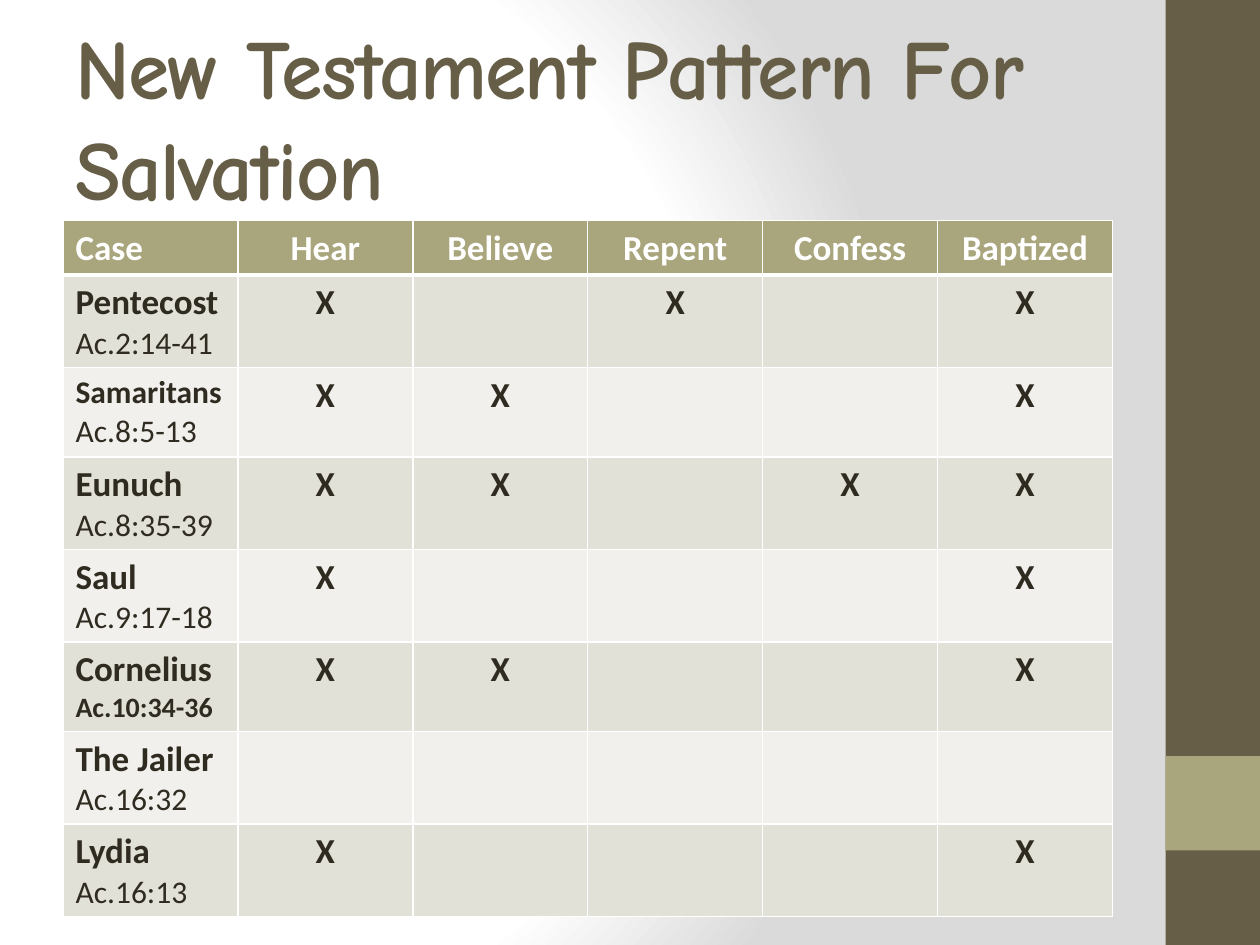
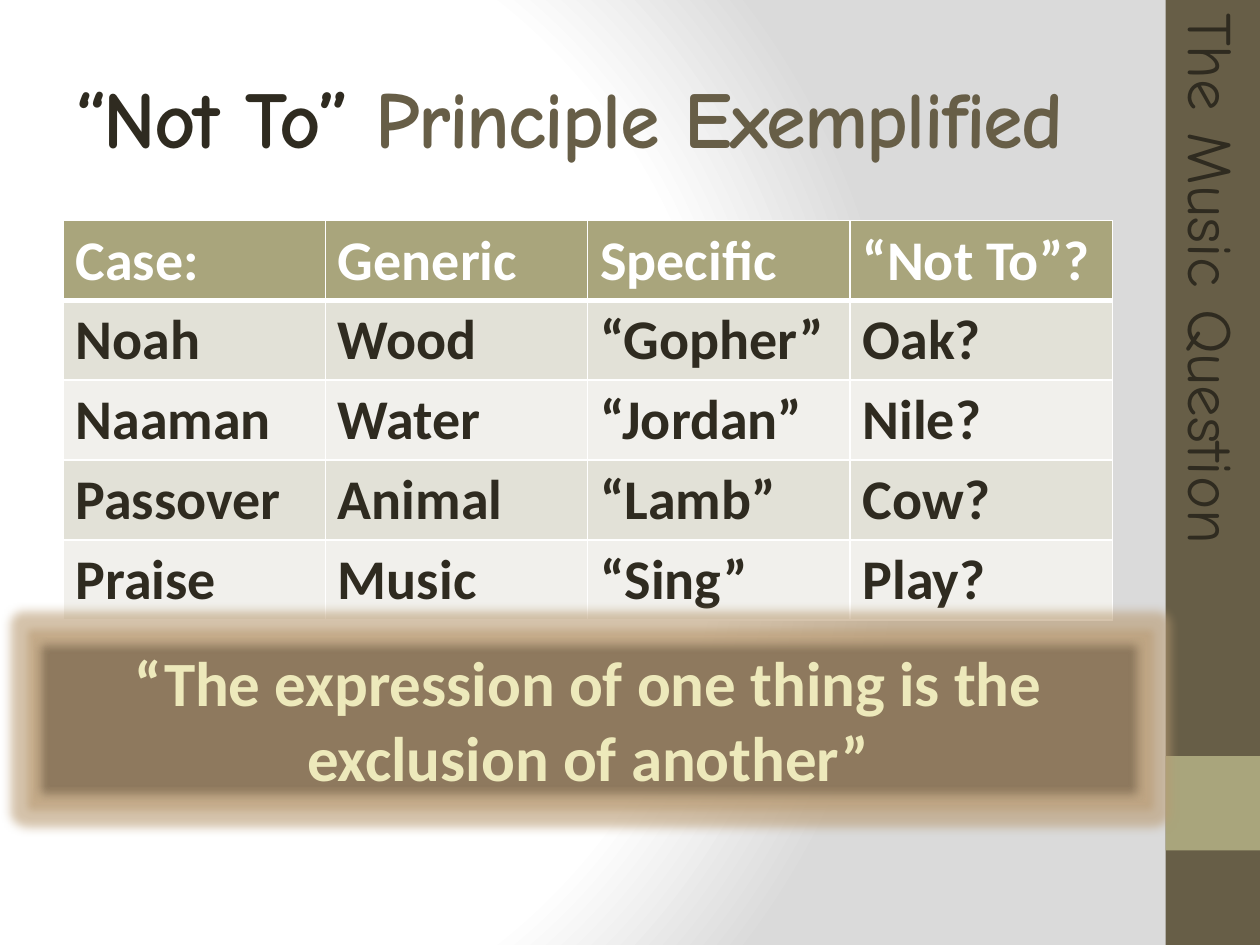
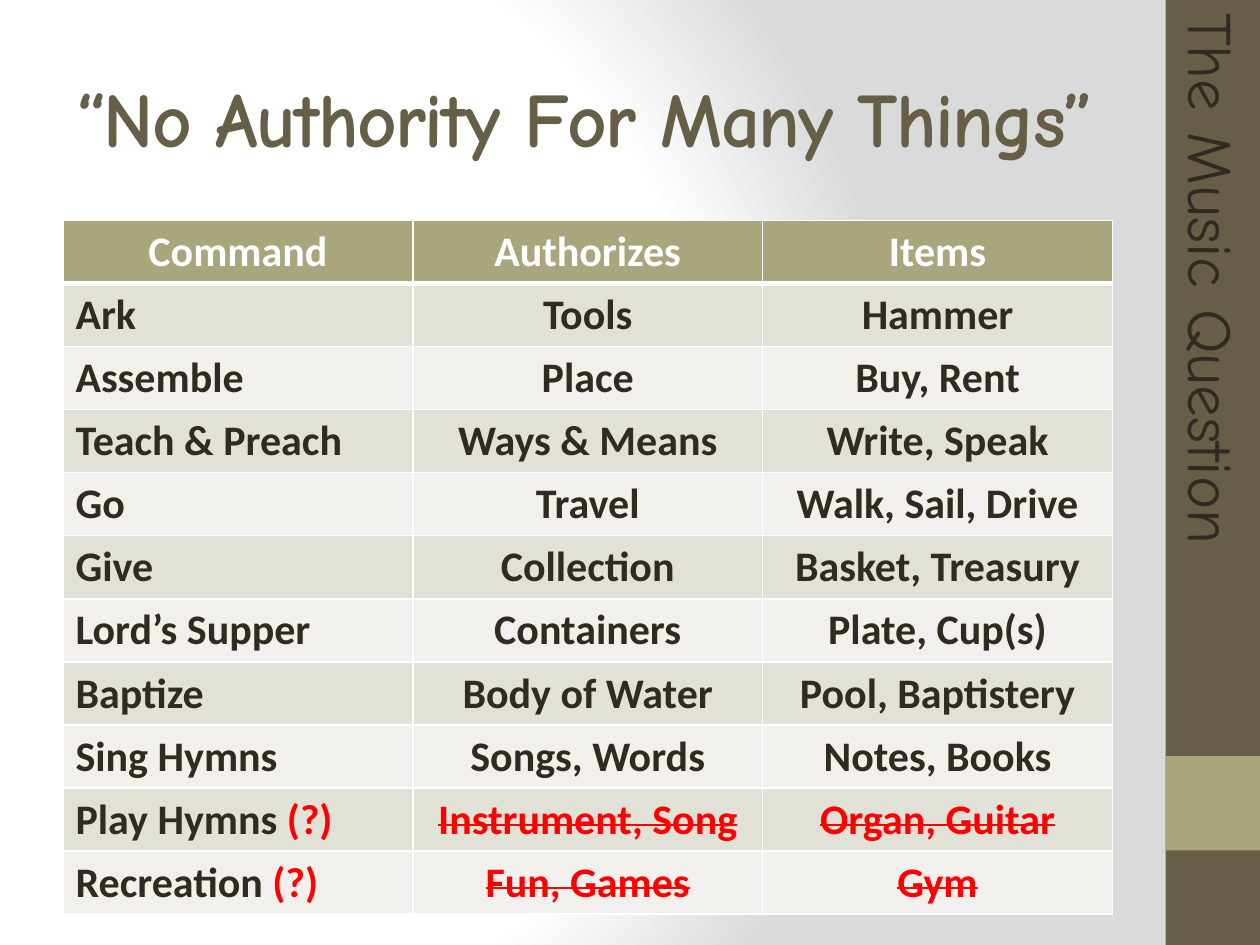
from pptx import Presentation
from pptx.dml.color import RGBColor
from pptx.enum.shapes import MSO_SHAPE
from pptx.enum.text import MSO_ANCHOR, PP_ALIGN
from pptx.oxml import parse_xml
from pptx.oxml.ns import nsdecls, qn
from pptx.util import Inches, Pt

RECT = MSO_SHAPE.RECTANGLE
MIDDLE = MSO_ANCHOR.MIDDLE
LEFT, CENTER = PP_ALIGN.LEFT, PP_ALIGN.CENTER

HUES = {
    "white": "FFFFFF", "grey": "DADADA", "olive": "675E47", "sage": "A9A57C",
    "ink": "2F2B20", "odd": "E2E1D7", "even": "F1F0EC", "red": "FF0000",
    "brown": "8E795E", "cream": "EDE9BB", "edge": "70623E", "glow": "B99B73",
}
BODY, HEAD = "Calibri", "Comic Neue"


def rgb(hue):
    return RGBColor.from_string(HUES[hue])


def solid(hue, alpha=100):
    return f'<a:srgbClr val="{HUES[hue]}"><a:alpha val="{alpha * 1000}"/></a:srgbClr>'


def line(tag, hue, width):
    return parse_xml(
        f'<a:{tag} {nsdecls("a")} w="{Pt(width)}">'
        f'<a:solidFill>{solid(hue)}</a:solidFill></a:{tag}>')


class Deck:
    def __init__(self):
        self.prs = Presentation()
        self.prs.slide_width, self.prs.slide_height = Inches(10), Inches(7.5)
        self.slide = None

    def page(self):
        self.slide = self.prs.slides.add_slide(self.prs.slide_layouts[6])
        self.slide.background.fill.gradient()
        grad = self.slide.element.find(".//" + qn("a:gradFill"))
        stops = "".join(
            f'<a:gs pos="{pos * 1000}">{solid(hue)}</a:gs>'
            for pos, hue in ((0, "white"), (75, "white"), (100, "grey")))
        grad.getparent().replace(grad, parse_xml(
            f'<a:gradFill {nsdecls("a")} rotWithShape="1"><a:gsLst>{stops}</a:gsLst>'
            '<a:path path="circle"><a:fillToRect l="20000" t="50000" r="100000" b="50000"/>'
            '</a:path></a:gradFill>'))
        self.block(9.25, 0, 0.75, 7.5, "olive")
        self.block(9.25, 6, 0.75, 0.75, "sage")

    def block(self, x, y, w, h, hue):
        shape = self.slide.shapes.add_shape(RECT, Inches(x), Inches(y), Inches(w), Inches(h))
        shape.shadow.inherit = False
        shape.fill.solid()
        shape.fill.fore_color.rgb = rgb(hue)
        shape.line.fill.background()
        return shape

    def box(self, x, y, w, h):
        box = self.slide.shapes.add_textbox(Inches(x), Inches(y), Inches(w), Inches(h))
        box.text_frame.word_wrap = True
        return box

    def put(self, para, runs, size, hue, bold=True, face=BODY, align=LEFT, strike=False):
        if isinstance(runs, str):
            runs = [(runs, hue)]
        para.alignment = align
        font = para.font
        font.name, font.size, font.bold = face, Pt(size), bold
        if len(runs) == 1:
            font.color.rgb = rgb(hue)
        for text, tint in runs:
            run = para.add_run()
            run.text = text
            if len(runs) > 1:
                run.font.color.rgb = rgb(tint)
            if strike:
                run._r.get_or_add_rPr().set("strike", "sngStrike")

    def title(self, runs, size, x=0.5, w=8.33, align=LEFT):
        frame = self.box(x, 0.3, w, 1.25).text_frame
        frame.vertical_anchor = MIDDLE
        para = frame.paragraphs[0]
        self.put(para, runs, size, "olive", face=HEAD, align=align)
        for run in para.runs:
            run._r.get_or_add_rPr().set("spc", "-100")

    def side(self, text):
        box = self.box(6.63, 2.65, 6, 0.71)
        box.rotation = 90
        self.put(box.text_frame.paragraphs[0], text, 36, "ink", bold=False, face=HEAD)

    def quote(self, text):
        shape = self.block(0.26, 5.05, 8.82, 1.31, "brown")
        effects = shape._element.spPr.find(qn("a:effectLst"))
        effects.append(parse_xml(
            f'<a:glow {nsdecls("a")} rad="{Pt(11)}">{solid("glow", 60)}</a:glow>'))
        effects.append(parse_xml(f'<a:softEdge {nsdecls("a")} rad="{Pt(5)}"/>'))
        para = shape.text_frame.paragraphs[0]
        self.put(para, text, 36, "cream", align=CENTER)
        para.runs[0]._r.get_or_add_rPr().insert(0, line("ln", "edge", 1))

    def cell(self, cell, hue, thick):
        cell.fill.solid()
        cell.fill.fore_color.rgb = rgb(hue)
        props = cell._tc.get_or_add_tcPr()
        for i, tag in enumerate(("lnL", "lnR", "lnT", "lnB")):
            props.insert(i, line(tag, "white", 3 if tag == thick else 1))

    def table(self, rows, size, head, body, aligns):
        count, wide = len(rows), len(rows[0])
        grid = self.slide.shapes.add_table(
            count, wide, Inches(0.5), Inches(1.75),
            Inches(8.33), Inches(head + body * (count - 1))).table
        for r, row in enumerate(rows):
            grid.rows[r].height = Inches(body if r else head)
            fill = ("odd" if r % 2 else "even") if r else "sage"
            thick = {0: "lnB", 1: "lnT"}.get(r)
            for c, item in enumerate(row):
                cell = grid.cell(r, c)
                self.cell(cell, fill, thick)
                frame = cell.text_frame
                for i, part in enumerate(item if isinstance(item, list) else [item]):
                    para = frame.paragraphs[0] if i == 0 else frame.add_paragraph()
                    look = {"size": size, "hue": "ink" if r else "white",
                            "align": aligns[min(r, 1)][c]}
                    look.update(part if isinstance(part, dict) else {"runs": part})
                    if look["runs"]:
                        self.put(para, **look)


def salvation(deck):
    deck.page()
    deck.title("New Testament Pattern For Salvation", 48)
    cases = [
        ("Pentecost", 20, "Ac.2:14-41", 18, "X.X.X"),
        ("Samaritans", 18, "Ac.8:5-13", 18, "XX..X"),
        ("Eunuch", 20, "Ac.8:35-39", 18, "XX.XX"),
        ("Saul", 20, "Ac.9:17-18", 18, "X...X"),
        ("Cornelius", 20, "Ac.10:34-36", 16, "XX..X"),
        ("The Jailer", 20, "Ac.16:32", 18, "....."),
        ("Lydia", 20, "Ac.16:13", 18, "X...X"),
    ]
    rows = [["Case", "Hear", "Believe", "Repent", "Confess", "Baptized"]]
    for name, big, verse, small, marks in cases:
        label = [{"runs": name, "size": big},
                 {"runs": verse, "size": small, "bold": small == 16}]
        rows.append([label] + [mark.strip(".") for mark in marks])
    deck.table(rows, 20, 0.43, 0.71, [[LEFT] + [CENTER] * 5] * 2)


def examples(deck):
    deck.page()
    deck.title([("“Not To”", "ink"), (" Principle Exemplified", "olive")], 46)
    deck.table([
        ["Case:", "Generic", "Specific", "“Not To”?"],
        ["Noah", "Wood", "“Gopher”", "Oak?"],
        ["Naaman", "Water", "“Jordan”", "Nile?"],
        ["Passover", "Animal", "“Lamb”", "Cow?"],
        ["Praise", "Music", "“Sing”", "Play?"],
    ], 32, 0.63, 0.63, [[LEFT] * 4] * 2)
    deck.quote("“The expression of one thing is the exclusion of another”")
    deck.side("The Music Question")


def commands(deck):
    deck.page()
    deck.title("“No Authority For Many Things”", 44, 0, 9.28, CENTER)
    rows = [
        ["Command", "Authorizes", "Items"],
        ["Ark", "Tools", "Hammer"],
        ["Assemble", "Place", "Buy, Rent"],
        ["Teach & Preach", "Ways & Means", "Write, Speak"],
        ["Go", "Travel", "Walk, Sail, Drive"],
        ["Give", "Collection", "Basket, Treasury"],
        ["Lord’s Supper", "Containers", "Plate, Cup(s)"],
        ["Baptize", "Body of Water", "Pool, Baptistery"],
        ["Sing Hymns", "Songs, Words", "Notes, Books"],
    ]
    for name, *items in (("Play Hymns ", "Instrument, Song", "Organ, Guitar"),
                         ("Recreation ", "Fun, Games", "Gym")):
        label = {"runs": [(name, "ink"), ("(?)", "red")]}
        rows.append([label] + [{"runs": item, "hue": "red", "strike": True}
                               for item in items])
    deck.table(rows, 24, 0.5, 0.5, [[CENTER] * 3, [LEFT, CENTER, CENTER]])
    deck.side("The Music Question")


def main():
    deck = Deck()
    salvation(deck)
    examples(deck)
    commands(deck)
    deck.prs.save("out.pptx")


if __name__ == "__main__":
    main()
